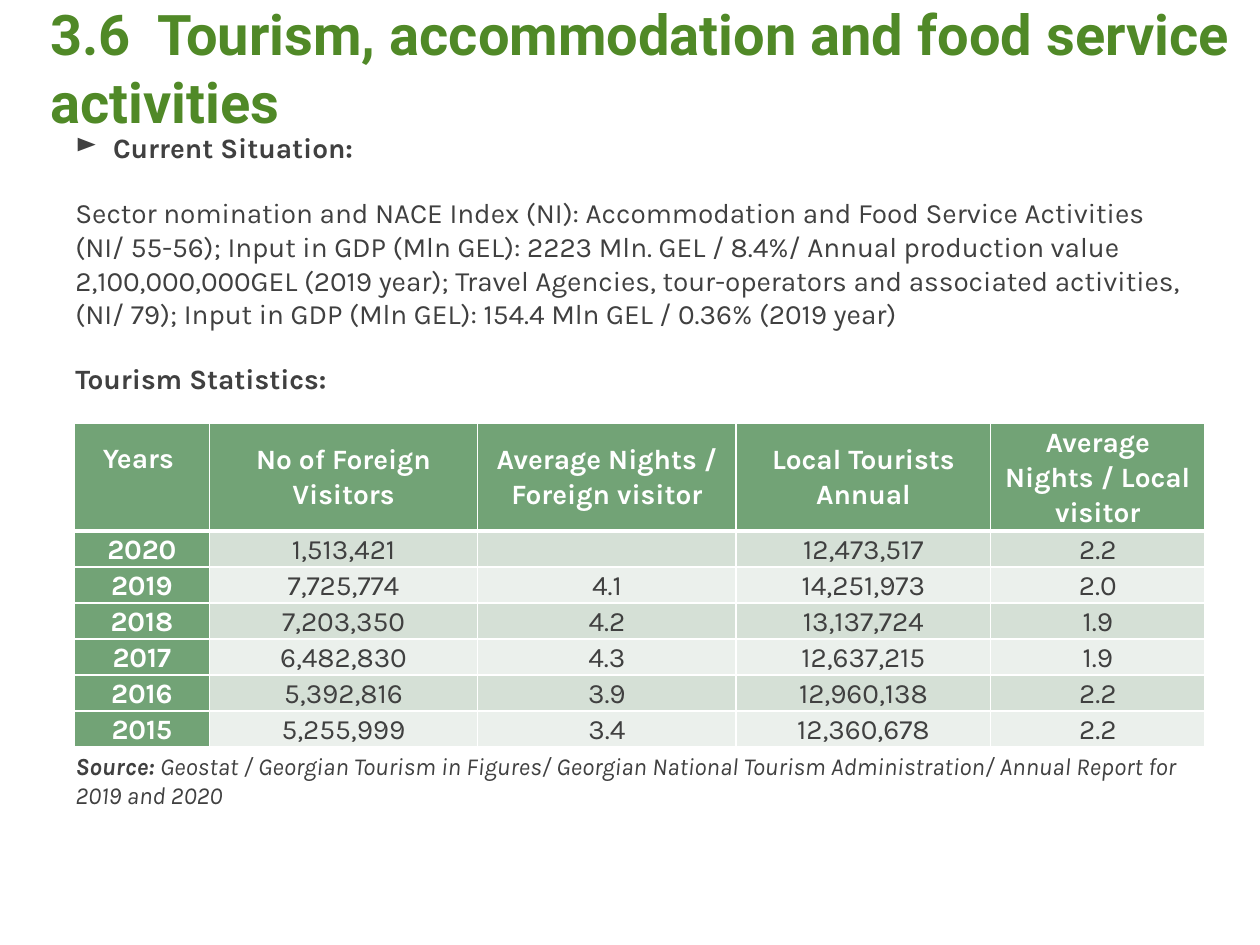
import pptx
import pptx.dml.color
import pptx.enum.text
import pptx.oxml
import pptx.oxml.ns
import pptx.util
from dataclasses import dataclass

Cm = pptx.util.Cm
Pt = pptx.util.Pt
ALIGN = pptx.enum.text.PP_ALIGN
ANCHOR = pptx.enum.text.MSO_ANCHOR


@dataclass(frozen=True)
class Theme:
    title_color: str = "508927"
    text_color: str = "404040"
    header_color: str = "72A376"
    bands: tuple = ("D5E0D6", "EBF0EC")
    white: str = "FFFFFF"
    title_font: str = "Roboto"
    body_font: str = "Karla"
    title_size: int = 32
    body_size: int = 16
    source_size: int = 14


def rgb(color):
    return pptx.dml.color.RGBColor.from_string(color)


def apply(target, values):
    for name, value in values.items():
        setattr(target, name, value)


def margins(left, top, right, bottom):
    return {"margin_left": Cm(left), "margin_top": Cm(top),
            "margin_right": Cm(right), "margin_bottom": Cm(bottom)}


def add_xml(parent, tag, content="", **attributes):
    listed = "".join(f' {name}="{value}"' for name, value in attributes.items())
    namespace = pptx.oxml.ns.nsdecls("a")
    parent.append(pptx.oxml.parse_xml(
        f"<a:{tag} {namespace}{listed}>{content}</a:{tag}>"))


class Page:
    def __init__(self, deck, theme):
        self.theme = theme
        self.slide = deck.slides.add_slide(deck.slide_layouts[6])

    def span(self, para, text, **changes):
        values = {"name": self.theme.body_font, "size": Pt(self.theme.body_size),
                  "bold": False, "italic": False}
        color = changes.pop("color", self.theme.text_color)
        span = para.add_run()
        span.text = text
        apply(span.font, {**values, **changes})
        span.font.color.rgb = rgb(color)

    def text_box(self, left, top, width, height, insets):
        box = self.slide.shapes.add_textbox(Cm(left), Cm(top), Cm(width), Cm(height))
        apply(box.text_frame, {"word_wrap": True, "vertical_anchor": ANCHOR.TOP,
                               **margins(*insets)})
        return box.text_frame

    def title(self, text):
        frame = self.text_box(0, 0, 25.4, 1.73, (1.02, 0, 0.25, 0.13))
        self.span(frame.paragraphs[0], text, name=self.theme.title_font, bold=True,
                  size=Pt(self.theme.title_size), color=self.theme.title_color)

    def body(self, paragraphs):
        frame = self.text_box(1.27, 2.51, 22.86, 15.8, (0.25, 0.13, 0.25, 0.13))
        for index, (spans, space_before, bullet) in enumerate(paragraphs):
            para = frame.add_paragraph() if index else frame.paragraphs[0]
            apply(para, {"space_before": Pt(space_before), "space_after": Pt(6)})
            if bullet:
                settings = para._p.get_or_add_pPr()
                settings.set("marL", str(Cm(0.76)))
                settings.set("indent", str(Cm(-0.76)))
                add_xml(settings, "buChar", char=bullet)
            for text, changes in spans:
                self.span(para, text, **changes)

    def borders(self, cell, top, bottom):
        settings = cell._tc.get_or_add_tcPr()
        fill = f'<a:solidFill><a:srgbClr val="{self.theme.white}"/></a:solidFill>'
        for side, width in (("L", 1), ("R", 1), ("T", top), ("B", bottom)):
            add_xml(settings, f"ln{side}", fill, w=Pt(width))

    def cell(self, cell, text, row, column):
        heading = row == 0 or column == 0
        # The first heading sits above the middle of its cell
        bottom = 0.78 if row == column == 0 else 0
        apply(cell, {"vertical_anchor": ANCHOR.MIDDLE, **margins(0.18, 0, 0.18, bottom)})
        self.borders(cell, top=3 if row == 1 else 1, bottom=3 if row == 0 else 1)
        cell.fill.solid()
        cell.fill.fore_color.rgb = rgb(
            self.theme.header_color if heading else self.theme.bands[(row - 1) % 2])
        para = cell.text_frame.paragraphs[0]
        apply(para, {"alignment": ALIGN.CENTER, "line_spacing": 1.07,
                     "space_before": Pt(4), "space_after": Pt(4)})
        if text:
            self.span(para, text, bold=heading,
                      color=self.theme.white if heading else self.theme.text_color)
        else:
            add_xml(para._p, "endParaRPr", sz=self.theme.body_size * 100)

    def table(self, left, top, widths, heights, rows):
        table = self.slide.shapes.add_table(
            len(rows), len(widths), Cm(left), Cm(top),
            Cm(sum(widths)), Cm(sum(heights))).table
        for column, width in zip(table.columns, widths):
            column.width = Cm(width)
        for row, height in zip(table.rows, heights):
            row.height = Cm(height)
        for row, texts in enumerate(rows):
            for column, text in enumerate(texts):
                self.cell(table.cell(row, column), text, row, column)


SECTOR = (
    "Sector nomination and NACE Index (NI): Accommodation and Food Service Activities "
    "(NI/ 55-56); Input in GDP (Mln GEL): 2223 Mln. GEL / 8.4%/ Annual production value "
    "2,100,000,000GEL (2019 year); Travel Agencies, tour-operators and associated "
    "activities, (NI/ 79); Input in GDP (Mln GEL): 154.4 Mln GEL / 0.36% (2019 year)")
SOURCE = ("Geostat / Georgian Tourism in Figures/ Georgian National Tourism "
          "Administration/ Annual Report for 2019 and 2020")
STATISTICS = [
    ("Years ", "No of Foreign Visitors", "Average Nights / Foreign visitor",
     "Local Tourists Annual", "Average Nights / Local visitor"),
    ("2020", "1,513,421", "", "12,473,517", "2.2"),
    ("2019", "7,725,774", "4.1", "14,251,973", "2.0"),
    ("2018", "7,203,350", "4.2", "13,137,724", "1.9"),
    ("2017", "6,482,830", "4.3", "12,637,215", "1.9"),
    ("2016", "5,392,816", "3.9", "12,960,138", "2.2"),
    ("2015", "5,255,999", "3.4", "12,360,678", "2.2"),
]


def main():
    deck = pptx.Presentation()
    apply(deck, {"slide_width": Cm(25.4), "slide_height": Cm(19.05)})
    theme = Theme()
    page = Page(deck, theme)

    # Body text, with room for the table above the source note
    note = {"size": Pt(theme.source_size), "italic": True}
    page.body([
        ([("Current Situation:", {"bold": True})], 12, "►"),
        ([(SECTOR, {})], 12, None),
        ([("Tourism Statistics:", {"bold": True})], 12, None),
        ([("Source: ", {**note, "bold": True}), (SOURCE, note)], 197, None),
    ])

    # Heading
    page.title("3.6  Tourism, accommodation and food service activities")

    # Visitor statistics
    page.table(1.5, 8.53, (2.72, 5.41, 5.21, 5.13, 4.32),
               [1.22] + [0.69] * 6, STATISTICS)
    deck.save("out.pptx")


if __name__ == "__main__":
    main()
